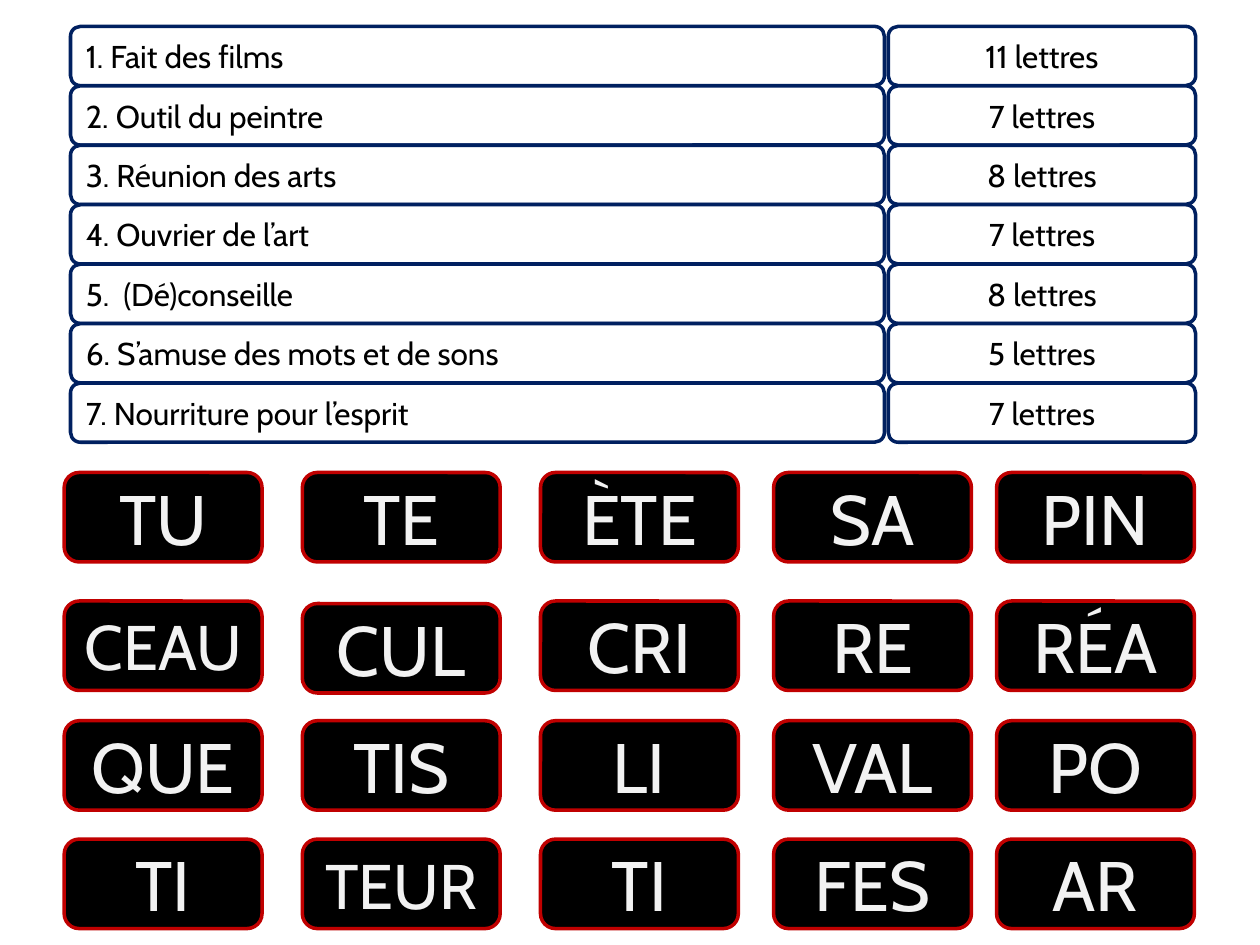
from dataclasses import dataclass

import pptx
import pptx.dml.color
import pptx.enum.shapes
import pptx.enum.text
import pptx.util
from pptx.dml.color import RGBColor
from pptx.util import Inches

WHITE = RGBColor(0xFF, 0xFF, 0xFF)
BLACK = RGBColor(0x00, 0x00, 0x00)
NAVY = RGBColor(0x00, 0x20, 0x60)
RED = RGBColor(0xC0, 0x00, 0x00)
PALE_GREY = RGBColor(0xF2, 0xF2, 0xF2)

LEFT = pptx.enum.text.PP_ALIGN.LEFT
CENTER = pptx.enum.text.PP_ALIGN.CENTER


@dataclass(frozen=True)
class BoxStyle:
    width: float
    height: float
    fill: RGBColor
    line: RGBColor
    text: RGBColor
    align: pptx.enum.text.PP_ALIGN


@dataclass(frozen=True)
class Clue:
    text: str
    letters: int


CLUE_STYLE = BoxStyle(6.46, 0.47, WHITE, NAVY, BLACK, LEFT)
COUNT_STYLE = BoxStyle(2.44, 0.47, WHITE, NAVY, BLACK, CENTER)
SYLLABLE_STYLE = BoxStyle(1.57, 0.71, BLACK, RED, PALE_GREY, CENTER)

CLUES = [
    Clue("1. Fait des films", 11),
    Clue("2. Outil du peintre", 7),
    Clue("3. Réunion des arts", 8),
    Clue("4. Ouvrier de l’art", 7),
    Clue("5.  (Dé)conseille", 8),
    Clue("6. S’amuse des mots et de sons", 5),
    Clue("7. Nourriture pour l’esprit", 7),
]
CLUE_LEFT, COUNT_LEFT = 0.56, 7.05
FIRST_CLUE_TOP, LAST_CLUE_TOP = 0.21, 3.04

SYLLABLES = [
    ["TU", "TE", "ÈTE", "SA", "PIN"],
    ["CEAU", "CUL", "CRI", "RE", "RÉA"],
    ["QUE", "TIS", "LI", "VAL", "PO"],
    ["TI", "TEUR", "TI", "FES", "AR"],
]
COLUMN_LEFTS = [0.51, 2.4, 4.29, 6.14, 7.91]
ROW_TOPS = [3.75, 4.77, 5.72, 6.66]
TOP_SHIFTS = {"CUL": 0.02}


def add_box(page: pptx.slide.Slide, left: float, top: float,
            style: BoxStyle, text: str, size: int) -> None:
    box = page.shapes.add_shape(
        pptx.enum.shapes.MSO_SHAPE.ROUNDED_RECTANGLE,
        Inches(left), Inches(top), Inches(style.width), Inches(style.height))
    box.shadow.inherit = False
    box.fill.solid()
    box.fill.fore_color.rgb = style.fill
    box.line.color.rgb = style.line
    box.line.width = pptx.util.Pt(2)
    box.text_frame.vertical_anchor = pptx.enum.text.MSO_ANCHOR.MIDDLE
    para = box.text_frame.paragraphs[0]
    para.alignment = style.align
    span = para.add_run()
    span.text = text
    span.font.name = "Cabin"
    span.font.size = pptx.util.Pt(size)
    span.font.color.rgb = style.text


def add_clues(page: pptx.slide.Slide) -> None:
    pitch = (LAST_CLUE_TOP - FIRST_CLUE_TOP) / (len(CLUES) - 1)
    for row, clue in enumerate(CLUES):
        top = FIRST_CLUE_TOP + row * pitch
        add_box(page, CLUE_LEFT, top, CLUE_STYLE, clue.text, 18)
        add_box(page, COUNT_LEFT, top, COUNT_STYLE,
                f"{clue.letters} lettres", 18)


def add_syllables(page: pptx.slide.Slide) -> None:
    """Four-letter syllables are set smaller so that they fit their box."""
    for top, syllables in zip(ROW_TOPS, SYLLABLES):
        for left, syllable in zip(COLUMN_LEFTS, syllables):
            size = 36 if len(syllable) > 3 else 40
            add_box(page, left, top + TOP_SHIFTS.get(syllable, 0),
                    SYLLABLE_STYLE, syllable, size)


def main() -> None:
    deck = pptx.Presentation()
    deck.slide_width, deck.slide_height = Inches(10), Inches(7.5)
    page = deck.slides.add_slide(deck.slide_layouts[6])
    add_clues(page)
    add_syllables(page)
    deck.save("out.pptx")


if __name__ == "__main__":
    main()
